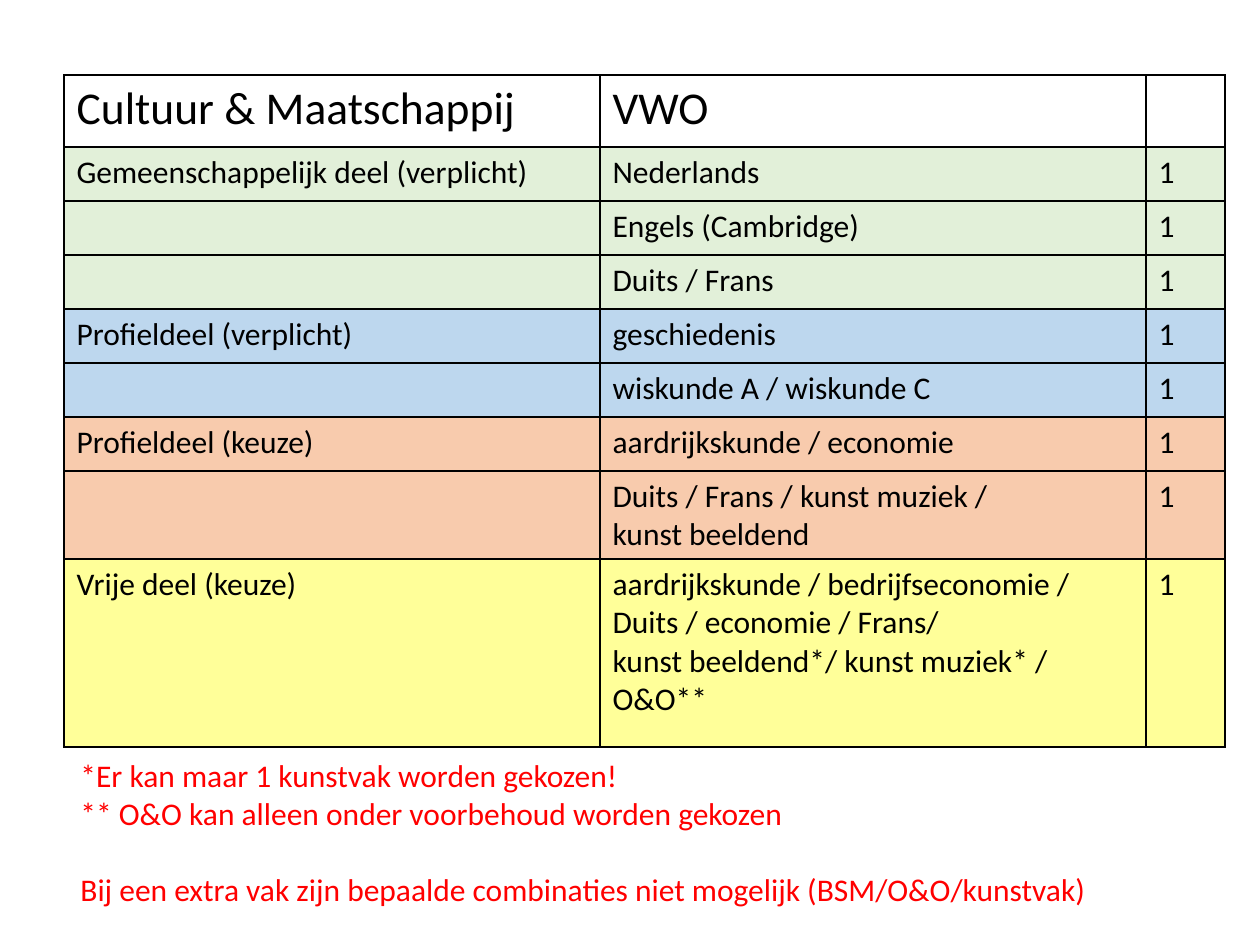
import dataclasses
import pptx
import pptx.dml.color
import pptx.enum.text
import pptx.oxml
import pptx.oxml.ns
import pptx.util

RGB = pptx.dml.color.RGBColor
BLACK = RGB(0x00, 0x00, 0x00)
RED = RGB(0xFF, 0x00, 0x00)
GREEN = RGB(0xE2, 0xF0, 0xD9)
BLUE = RGB(0xBD, 0xD7, 0xEE)
PEACH = RGB(0xF8, 0xCB, 0xAD)
YELLOW = RGB(0xFF, 0xFF, 0x99)

SCALE = 914400 / 126  # EMU per px
FONT = "Calibri"
COLS = (536, 546, 79)


@dataclasses.dataclass
class Row:
    group: str
    topic: str
    count: str = "1"
    fill: RGB | None = None
    high: int = 54
    size: int = 18


ROWS = [
    Row("Cultuur & Maatschappij", "VWO", "", high=72, size=26),
    Row("Gemeenschappelijk deel (verplicht)", "Nederlands", fill=GREEN),
    Row("", "Engels (Cambridge)", fill=GREEN),
    Row("", "Duits / Frans", fill=GREEN),
    Row("Profieldeel (verplicht)", "geschiedenis", fill=BLUE),
    Row("", "wiskunde A / wiskunde C", fill=BLUE),
    Row("Profieldeel (keuze)", "aardrijkskunde / economie", fill=PEACH),
    Row("", "Duits / Frans / kunst muziek /\nkunst beeldend", fill=PEACH, high=86),
    Row("Vrije deel (keuze)",
        "aardrijkskunde / bedrijfseconomie /\nDuits / economie / Frans/\n"
        "kunst beeldend*/ kunst muziek* / O&O**", fill=YELLOW, high=188),
]
NOTES = (
    "*Er kan maar 1 kunstvak worden gekozen!\n"
    "** O&O kan alleen onder voorbehoud worden gekozen\n"
    "Bij een extra vak zijn bepaalde combinaties niet mogelijk (BSM/O&O/kunstvak)"
)


def px(num: int) -> int:
    return pptx.util.Emu(round(num * SCALE))


def write(frame, text: str, size: int = 18, color: RGB = BLACK) -> None:
    """Put one paragraph per line of text into the frame."""
    frame.text = text
    for para in frame.paragraphs:
        for run in para.runs:
            run.font.name = FONT
            run.font.size = pptx.util.Pt(size)
            run.font.color.rgb = color


def border(cell) -> None:
    """Draw a thin black line on all four sides."""
    props = cell._tc.get_or_add_tcPr()
    for side in "LRTB":
        props.append(pptx.oxml.parse_xml(
            f'<a:ln{side} {pptx.oxml.ns.nsdecls("a")} w="12700">'
            f'<a:solidFill><a:srgbClr val="{BLACK}"/></a:solidFill></a:ln{side}>'))


def grid(slide, left: int, top: int, rows: list[Row]) -> None:
    high = sum(row.high for row in rows)
    shape = slide.shapes.add_table(
        len(rows), len(COLS), px(left), px(top), px(sum(COLS)), px(high))
    table = shape.table
    table.first_row = table.horz_banding = False
    for col, width in zip(table.columns, COLS):
        col.width = px(width)
    for line, row in zip(table.rows, rows):
        line.height = px(row.high)
        for cell, text in zip(line.cells, (row.group, row.topic, row.count)):
            write(cell.text_frame, text, size=row.size)
            border(cell)
            if row.fill is None:
                cell.fill.background()
            else:
                cell.fill.solid()
                cell.fill.fore_color.rgb = row.fill


def notes(slide, left: int, top: int, width: int, high: int) -> None:
    box = slide.shapes.add_textbox(px(left), px(top), px(width), px(high))
    frame = box.text_frame
    frame.word_wrap = True
    frame.auto_size = pptx.enum.text.MSO_AUTO_SIZE.SHAPE_TO_FIT_TEXT
    write(frame, NOTES, color=RED)
    # One line of space sets the last remark apart
    frame.paragraphs[-1].space_before = pptx.util.Pt(22)


def main() -> None:
    deck = pptx.Presentation()
    deck.slide_width, deck.slide_height = px(1260), px(945)
    slide = deck.slides.add_slide(deck.slide_layouts[6])

    # Remarks under the table
    notes(slide, 68, 750, 1077, 204)
    # Subjects by section of the profile
    grid(slide, 64, 75, ROWS)

    deck.save("out.pptx")


if __name__ == "__main__":
    main()
